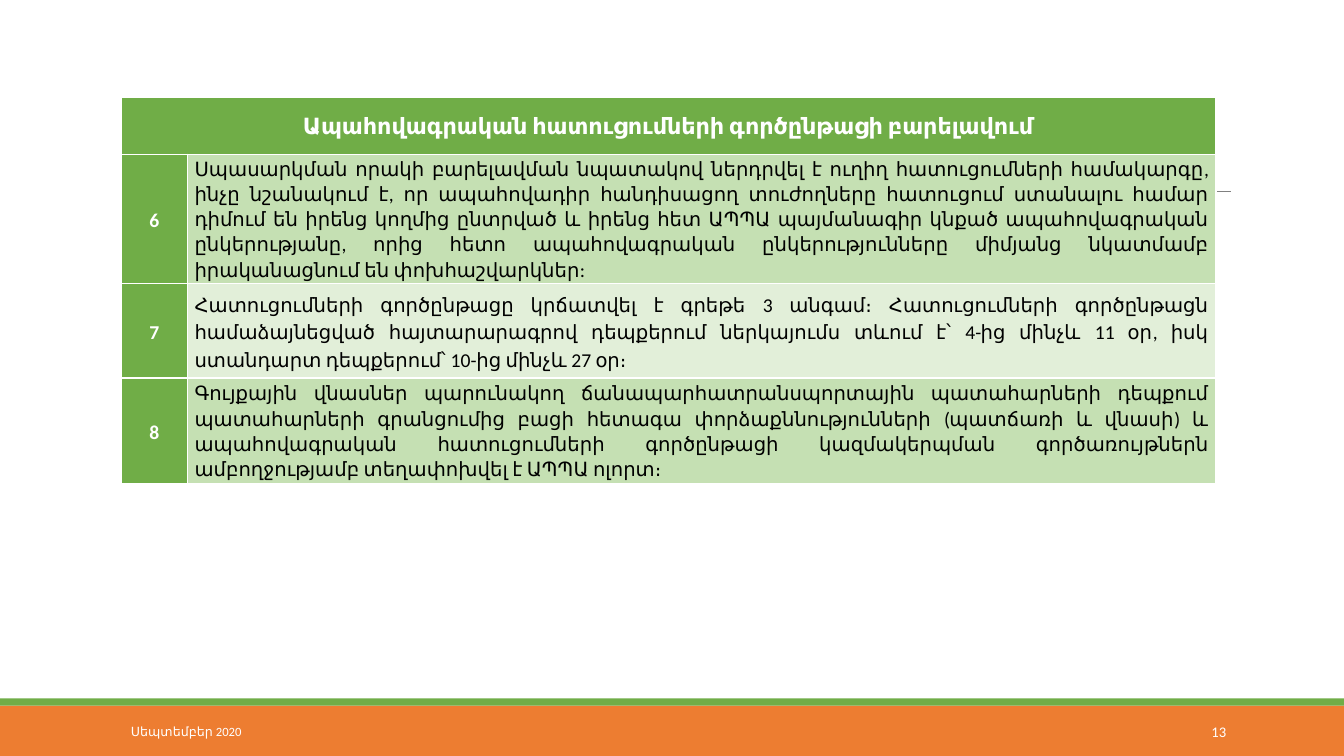
from dataclasses import dataclass

from lxml import etree
from pptx import Presentation
from pptx.dml.color import RGBColor
from pptx.enum.shapes import MSO_CONNECTOR, MSO_SHAPE
from pptx.enum.text import MSO_ANCHOR, PP_ALIGN
from pptx.oxml.ns import qn
from pptx.util import Emu, Pt

PX = 9144
RECT = MSO_SHAPE.RECTANGLE
LINE = MSO_CONNECTOR.STRAIGHT
MID = MSO_ANCHOR.MIDDLE
LEFT, MID_X, RIGHT, FULL = (
    PP_ALIGN.LEFT, PP_ALIGN.CENTER, PP_ALIGN.RIGHT, PP_ALIGN.JUSTIFY)


@dataclass(frozen=True)
class Theme:
    font: str = "Calibri"
    white: str = "FFFFFF"
    black: str = "000000"
    green: str = "70AD47"
    orange: str = "ED7D31"
    gray: str = "808080"
    mid: str = "C5E0B3"
    pale: str = "E2EFD9"
    head: float = 16
    body: float = 14
    date: float = 9
    page: float = 10.5


T = Theme()
TITLE = "Ապահովագրական հատուցումների գործընթացի բարելավում"
ROWS = [
    ("6", "Սպասարկման որակի բարելավման նպատակով ներդրվել է ուղիղ հատուցումների "
     "համակարգը, ինչը նշանակում է, որ ապահովադիր հանդիսացող տուժողները հատուցում "
     "ստանալու համար դիմում են իրենց կողմից ընտրված և իրենց հետ ԱՊՊԱ պայմանագիր "
     "կնքած ապահովագրական ընկերությանը, որից հետո ապահովագրական ընկերությունները "
     "միմյանց նկատմամբ իրականացնում են փոխհաշվարկներ:", T.mid, 1.06),
    ("7", "Հատուցումների գործընթացը կրճատվել է գրեթե 3 անգամ։ Հատուցումների "
     "գործընթացն համաձայնեցված հայտարարագրով դեպքերում ներկայումս տևում է՝ 4-ից "
     "մինչև 11 օր, իսկ ստանդարտ դեպքերում՝ 10-ից մինչև 27 օր։", T.pale, 1.15),
    ("8", "Գույքային վնասներ պարունակող ճանապարհատրանսպորտային պատահարների դեպքում "
     "պատահարների գրանցումից բացի հետագա փորձաքննությունների (պատճառի և վնասի) և "
     "ապահովագրական հատուցումների գործընթացի կազմակերպման գործառույթներն "
     "ամբողջությամբ տեղափոխվել է ԱՊՊԱ ոլորտ։", T.mid, 1.06),
]


def px(*nums):
    """Turn px lengths into EMU."""
    return [Emu(n * PX) for n in nums]


def write(frame, text, size=T.body, color=T.white, bold=False, align=LEFT,
          lead=None, track=0):
    """Put one formatted paragraph into a text frame."""
    para = frame.paragraphs[0]
    para.alignment = align
    if lead:
        para.line_spacing = lead
    run = para.add_run()
    run.text = text
    font = run.font
    font.name, font.size, font.bold = T.font, Pt(size), bold
    font.color.rgb = RGBColor.from_string(color)
    if track:
        run._r.get_or_add_rPr().set("spc", str(track))


def band(slide, box, color):
    """Draw a plain filled bar."""
    bar = slide.shapes.add_shape(RECT, *px(*box))
    bar.shadow.inherit = False
    bar.fill.solid()
    bar.fill.fore_color.rgb = RGBColor.from_string(color)
    bar.line.fill.background()


def rule(slide, ends):
    """Draw a thin gray line."""
    line = slide.shapes.add_connector(LINE, *px(*ends))
    line.line.color.rgb = RGBColor.from_string(T.gray)
    line.line.width = Pt(0.5)
    etree.SubElement(line._element.spPr, qn("a:effectLst"))


def label(slide, box, text, **look):
    """Add a text box centred in height."""
    frame = slide.shapes.add_textbox(*px(*box)).text_frame
    frame.word_wrap = True
    frame.vertical_anchor = MID
    write(frame, text, **look)


def dress(cell, fill, side):
    """Set the borders, fill, anchor and margins of a cell."""
    props = cell._tc.get_or_add_tcPr()
    for tag in ("a:lnL", "a:lnR", "a:lnT", "a:lnB"):
        edge = etree.SubElement(props, qn(tag), w=str(Pt(1)))
        paint = etree.SubElement(edge, qn("a:solidFill"))
        etree.SubElement(paint, qn("a:srgbClr"), val=T.white)
    cell.fill.solid()
    cell.fill.fore_color.rgb = RGBColor.from_string(fill)
    cell.vertical_anchor = MID
    (cell.margin_left, cell.margin_top,
     cell.margin_right, cell.margin_bottom) = px(side, 1, side, 0)


def grid(slide, box, cols, highs):
    """Build the table of numbered points."""
    table = slide.shapes.add_table(len(highs), len(cols), *px(*box)).table
    for col, wide in zip(table.columns, px(*cols)):
        col.width = wide
    for row, high in zip(table.rows, px(*highs)):
        row.height = high
    for cell in table.rows[0].cells:
        dress(cell, T.green, 6)
    top = table.cell(0, 0)
    top.merge(table.cell(0, 1))
    write(top.text_frame, TITLE, size=T.head, bold=True, align=MID_X, lead=1.06)
    for row, (num, text, fill, lead) in enumerate(ROWS, 1):
        mark, body = table.cell(row, 0), table.cell(row, 1)
        dress(mark, T.green, 7)
        dress(body, fill, 7)
        write(mark.text_frame, num, bold=True, align=MID_X, lead=1.15, track=-50)
        write(body.text_frame, text, color=T.black, align=FULL, lead=lead)


def main():
    """Build the slide and save it."""
    deck = Presentation()
    deck.slide_width, deck.slide_height = px(1333, 750)
    slide = deck.slides.add_slide(deck.slide_layouts[6])
    band(slide, (0, 700, 1333, 50), T.orange)
    band(slide, (0, 693, 1333, 7), T.green)
    rule(slide, (131, 190, 1221, 190))
    grid(slide, (120, 97, 1086, 383), (66, 1020), (56, 128, 94, 105))
    label(slide, (120, 706, 270, 40), "Սեպտեմբեր 2020", size=T.date)
    label(slide, (1083, 706, 143, 40), "13", size=T.page, align=RIGHT)
    deck.save("out.pptx")


if __name__ == "__main__":
    main()
